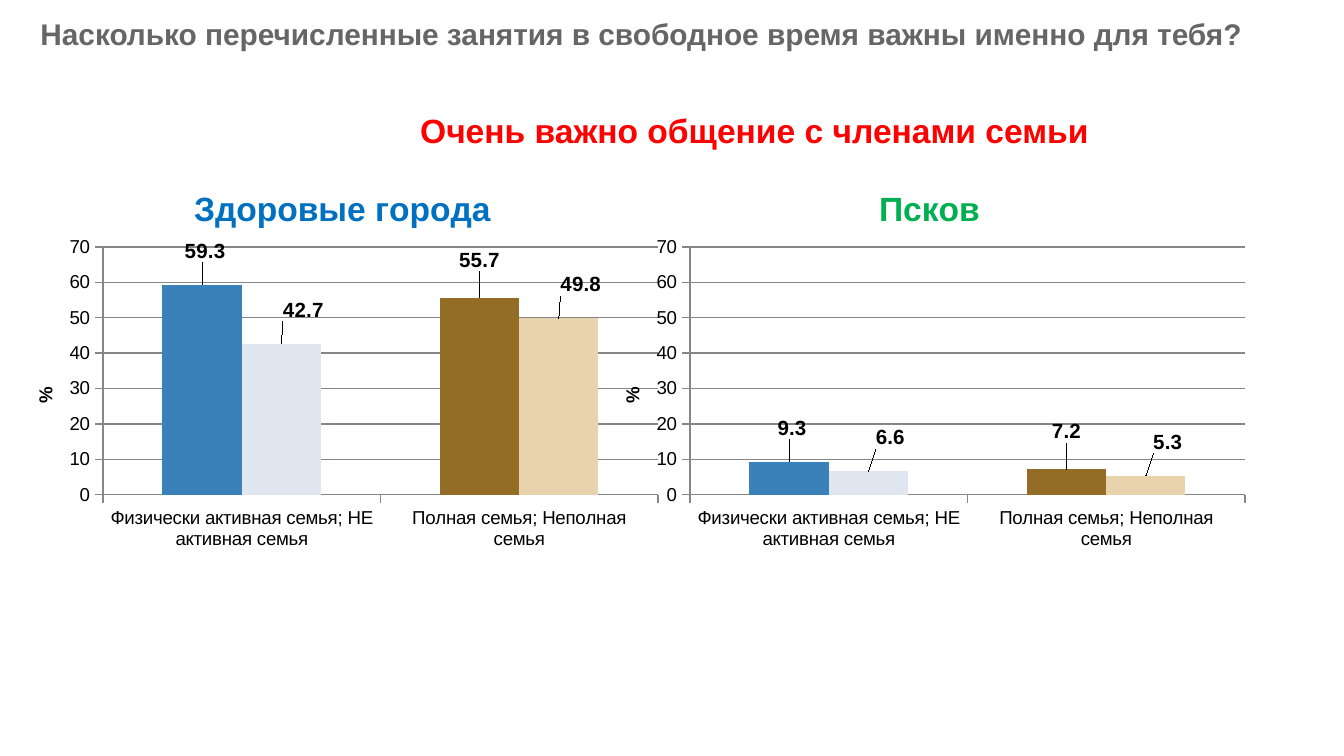
"""Build a slide comparing the value of family contact in two clustered column charts."""
from lxml import etree
from pptx import Presentation
from pptx.chart.data import CategoryChartData
from pptx.dml.color import RGBColor
from pptx.enum.chart import XL_CHART_TYPE, XL_LABEL_POSITION, XL_TICK_MARK
from pptx.enum.text import MSO_ANCHOR, MSO_AUTO_SIZE, PP_ALIGN
from pptx.oxml.ns import qn
from pptx.util import Emu, Pt

COLUMNS = XL_CHART_TYPE.COLUMN_CLUSTERED
OUTSIDE = XL_LABEL_POSITION.OUTSIDE_END
TICK_OUT, TICK_NONE = XL_TICK_MARK.OUTSIDE, XL_TICK_MARK.NONE
TOP, LEFT, NO_FIT = MSO_ANCHOR.TOP, PP_ALIGN.LEFT, MSO_AUTO_SIZE.NONE
SCALE = 914400 / 134.4
FONT = "Arial"

TITLE = "Насколько перечисленные занятия в свободное время важны именно для тебя?"
SUBTITLE = "Очень важно общение с членами семьи"
CATEGORIES = ["Физически активная семья; НЕ активная семья", "Полная семья; Неполная семья"]
CHARTS = [
    {"title": "Здоровые города", "color": "0070C0", "left": 0, "title_x": 188,
     "values": [(59.3, 55.7), (42.7, 49.8)]},
    {"title": "Псков", "color": "00B050", "left": 587, "title_x": 286,
     "values": [(9.3, 7.2), (6.6, 5.3)]},
]
SERIES_COLORS = ["3A81BA", "D89F39"]
POINT_COLORS = [("3A81BA", "936C26"), ("DFE6F0", "E9D3AC")]
LABEL_SHIFTS = [((3, -17), (0, -21)), ((22, -17), (22, -17))]
CHART_TOP, CHART_W, CHART_H = 156, 672, 403
PLOT = (103, 91, 555, 248)
GRID = "868686"


def px(n):
    return Emu(round(n * SCALE))


def rgb(value):
    return RGBColor.from_string(value)


def style(font, size, color="000000", bold=False):
    font.name, font.size, font.bold = FONT, Pt(size), bold
    font.color.rgb = rgb(color)


def write(tf, text, size, color, bold=True):
    p = tf.paragraphs[0]
    r = p.add_run()
    r.text = text
    style(r.font, size, color, bold)
    return p


def place(parent, index, x, y, w=None, h=None, inner=False):
    old = parent.find(qn("c:layout"))
    if old is not None:
        parent.remove(old)
    layout = etree.Element(qn("c:layout"))
    parent.insert(index, layout)
    manual = etree.SubElement(layout, qn("c:manualLayout"))
    items = [("x", x / CHART_W), ("y", y / CHART_H)]
    if inner:
        edges = [("layoutTarget", "inner"), ("xMode", "edge"), ("yMode", "edge")]
        items = edges + items + [("w", w / CHART_W), ("h", h / CHART_H)]
    elif parent.tag == qn("c:title"):
        items = [("xMode", "edge"), ("yMode", "edge")] + items
    for tag, value in items:
        val = value if isinstance(value, str) else f"{value:.4f}"
        etree.SubElement(manual, qn(f"c:{tag}")).set("val", val)


def style_axis(axis):
    axis.major_tick_mark, axis.minor_tick_mark = TICK_OUT, TICK_NONE
    axis.format.line.color.rgb = rgb(GRID)
    style(axis.tick_labels.font, 10)


def add_columns(s, item):
    data = CategoryChartData(number_format="0.0")
    data.categories = CATEGORIES
    for i, values in enumerate(item["values"], 1):
        data.add_series(f"Series {i}", values)
    chart = s.shapes.add_chart(COLUMNS, px(item["left"]), px(CHART_TOP),
                               px(CHART_W), px(CHART_H), data).chart
    style(chart.font, 10)
    chart.has_legend = False
    write(chart.chart_title.text_frame, item["title"], 18, item["color"])
    style_axis(chart.category_axis)
    axis = chart.value_axis
    style_axis(axis)
    axis.minimum_scale, axis.maximum_scale, axis.major_unit = 0, 70, 10
    axis.tick_labels.number_format = "0"
    axis.tick_labels.number_format_is_linked = False
    axis.major_gridlines.format.line.color.rgb = rgb(GRID)
    write(axis.axis_title.text_frame, "%", 10, "000000")

    plot = chart.plots[0]
    plot.gap_width, plot.overlap, plot.vary_by_categories = 150, 0, False
    for series, fill, colors in zip(plot.series, SERIES_COLORS, POINT_COLORS):
        series.invert_if_negative = False
        series.format.fill.solid()
        series.format.fill.fore_color.rgb = rgb(fill)
        labels = series.data_labels
        labels.show_value = True
        labels.number_format, labels.number_format_is_linked = "0.0", False
        labels.position = OUTSIDE
        style(labels.font, 11, bold=True)
        for i, color in enumerate(colors):
            point = series.points[i]
            point.format.fill.solid()
            point.format.fill.fore_color.rgb = rgb(color)
            style(point.data_label.font, 11, bold=True)
            point.data_label.position = OUTSIDE

    root = chart.element
    place(next(root.iter(qn("c:plotArea"))), 0, *PLOT, inner=True)
    shifts = [shift for row in LABEL_SHIFTS for shift in row]
    for label, shift in zip(root.iter(qn("c:dLbl")), shifts):
        place(label, 1, *shift)
    heading, unit = root.iter(qn("c:title"))
    place(heading, 1, item["title_x"], 25)
    place(unit, 1, 30, 228)
    body = next(unit.iter(qn("a:bodyPr")))
    body.set("rot", "-5400000")
    body.set("vert", "horz")


def main():
    prs = Presentation()
    prs.slide_width, prs.slide_height = px(1344), px(756)
    s = prs.slides.add_slide(prs.slide_layouts[5])
    title = s.shapes.title
    title.left, title.top, title.width, title.height = map(px, (27, 9, 1292, 39))
    tf = title.text_frame
    tf.auto_size, tf.vertical_anchor, tf.word_wrap = NO_FIT, TOP, True
    write(tf, TITLE, 16, "666666").alignment = LEFT
    sp = s.shapes.add_textbox(*map(px, (407, 103, 703, 54)))
    sp.text_frame.word_wrap = False
    write(sp.text_frame, SUBTITLE, 18, "FF0000")
    for item in CHARTS:
        add_columns(s, item)
    prs.save("out.pptx")


if __name__ == "__main__":
    main()
